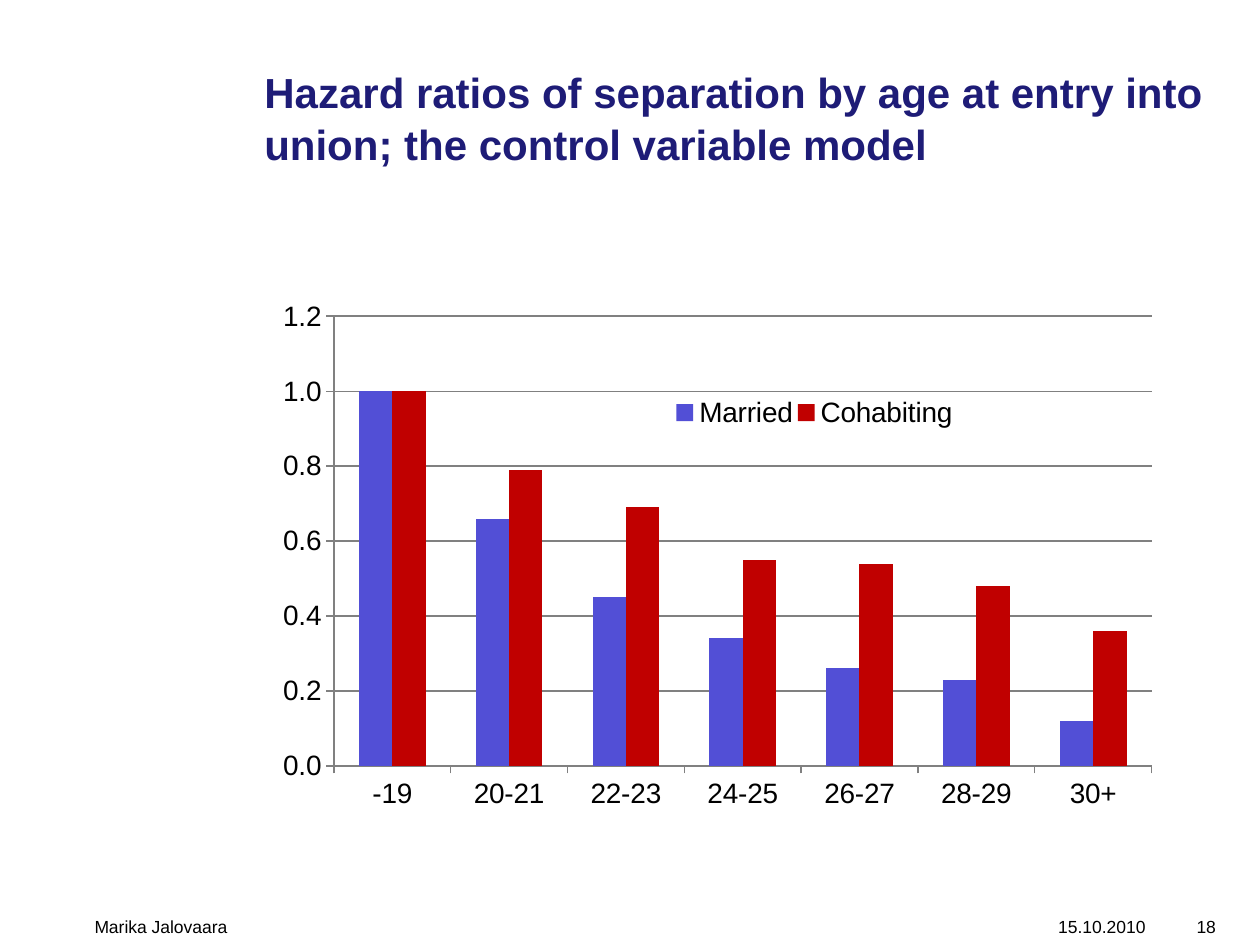
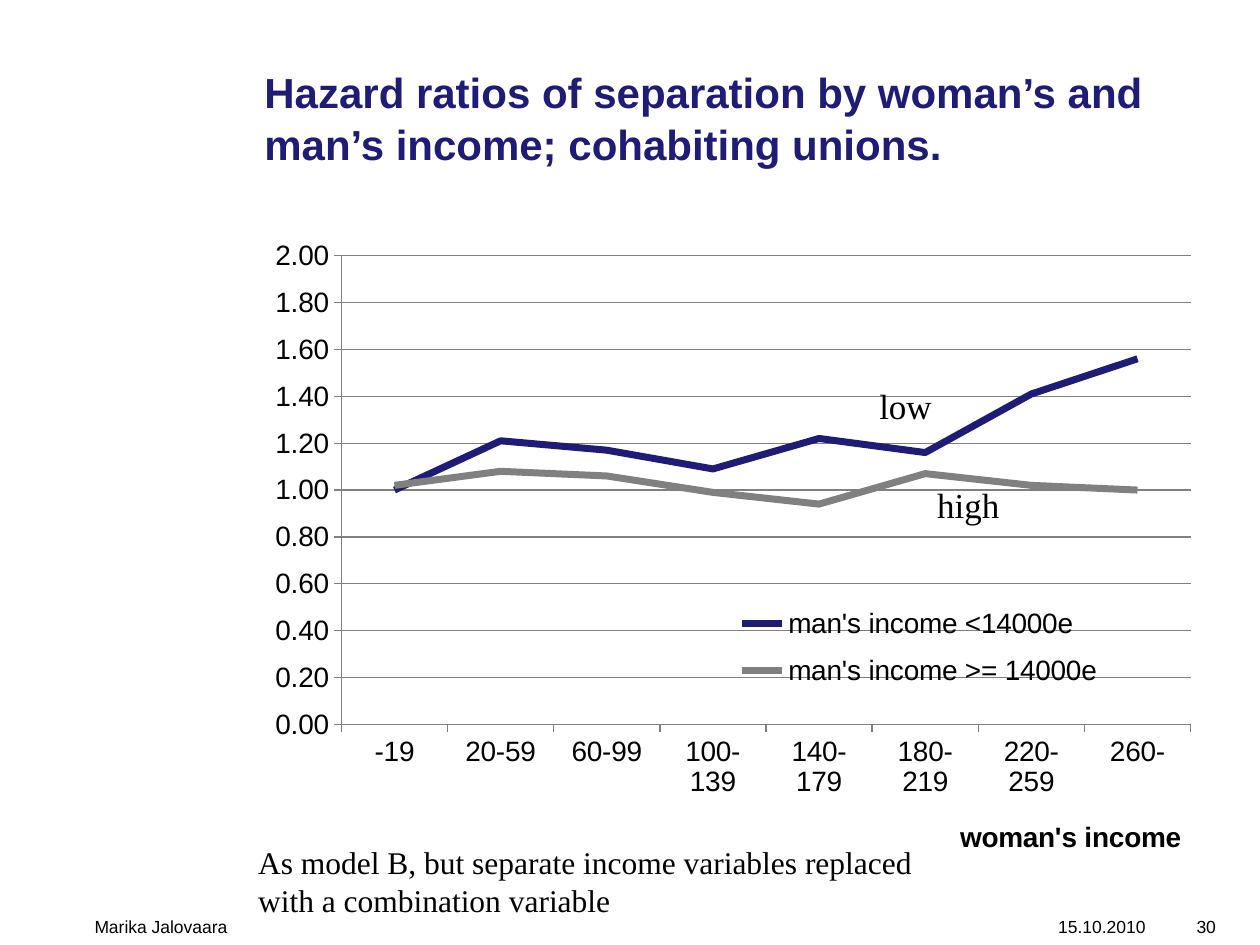
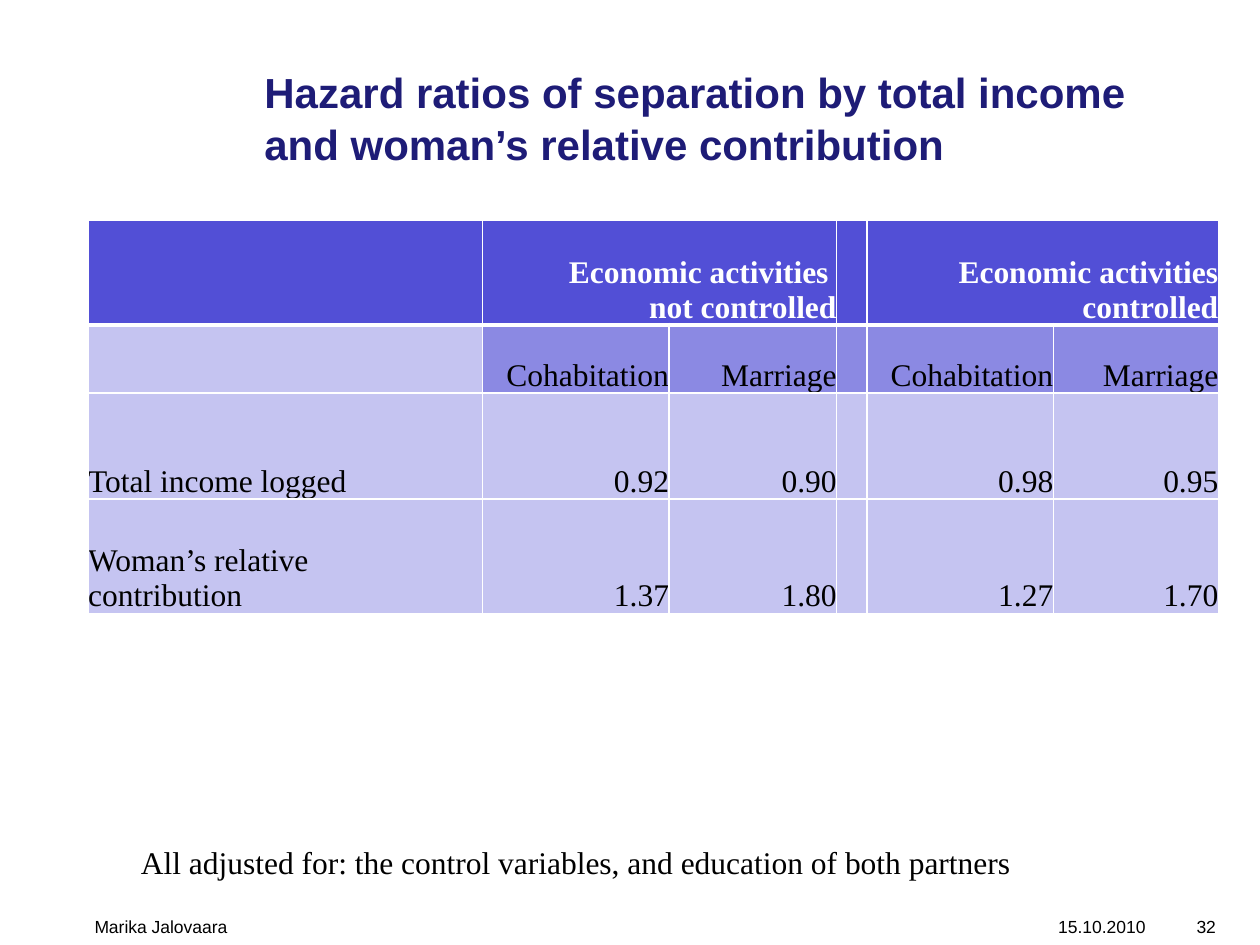
from lxml import etree
from pptx import Presentation
from pptx.chart.data import CategoryChartData
from pptx.dml.color import RGBColor
from pptx.enum.chart import (XL_CHART_TYPE, XL_LEGEND_POSITION,
                             XL_MARKER_STYLE, XL_TICK_MARK)
from pptx.enum.text import MSO_ANCHOR, PP_ALIGN
from pptx.oxml.ns import qn
from pptx.util import Inches, Pt

COLUMN, LINE = XL_CHART_TYPE.COLUMN_CLUSTERED, XL_CHART_TYPE.LINE
LEGEND_RIGHT = XL_LEGEND_POSITION.RIGHT
NO_MARKER = XL_MARKER_STYLE.NONE
TICK_CROSS = XL_TICK_MARK.OUTSIDE
TOP, BOTTOM = MSO_ANCHOR.TOP, MSO_ANCHOR.BOTTOM
LEFT, RIGHT = PP_ALIGN.LEFT, PP_ALIGN.RIGHT

SANS, SERIF = "Arial", "Times New Roman"
NAVY, VIOLET, RED, GREY = "1E1C77", "524FD6", "C00000", "808080"
MID, PALE, BLACK, WHITE = "8B89E3", "C5C4F1", "000000", "FFFFFF"

# Content; places inside a chart are in inches from its corner
AUTHOR, DATE = "Marika Jalovaara", "15.10.2010"

AGE = {
    "title": "Hazard ratios of separation by age at entry into union; "
             "the control variable model",
    "number": "18",
    "notes": [],
    "chart": {
        "type": COLUMN, "at": (1.97, 2.25, 7.5, 4.5),
        "cats": ["-19", "20-21", "22-23", "24-25", "26-27", "28-29", "30+"],
        "series": [
            ("Cohabiting", RED, [1, 0.79, 0.69, 0.55, 0.54, 0.48, 0.36]),
            ("Married", VIOLET, [1, 0.66, 0.45, 0.34, 0.26, 0.23, 0.12]),
        ],
        "last_first": True,
        "max": 1.2, "format": "0.0", "linked": False,
        "plot": (0.68, 0.26, 6.49, 3.57),
        "legend": (3.36, 0.87, 2.27, 0.31),
    },
    "labels": [],
}

INCOME = {
    "title": "Hazard ratios of separation by woman’s and man’s income; "
             "cohabiting unions.",
    "number": "30",
    "notes": [((1.95, 6.64, 5.51, 0.71),
               ["As model B, but separate income variables replaced",
                "with a combination variable"])],
    "chart": {
        "type": LINE, "at": (2, 1.75, 7.67, 5.42),
        "cats": ["-19", "20-59", "60-99", "100-139", "140-179", "180-219",
                 "220-259", "260-"],
        "series": [
            ("man's income <14000e", NAVY,
             [1, 1.21, 1.17, 1.09, 1.22, 1.16, 1.41, 1.56]),
            ("man's income >= 14000e", GREY,
             [1.02, 1.08, 1.06, 0.99, 0.94, 1.07, 1.02, 1]),
        ],
        "last_first": False,
        "max": 2, "format": "0.00", "linked": True,
        "plot": (0.71, 0.28, 6.74, 3.72),
        "legend": (3.81, 2.95, 2.98, 0.87),
        "axis_title": ("woman's income", (5.58, 4.71)),
    },
    "labels": [((6.88, 3, 0.62, 0.44), ["low"]),
               ((7.34, 3.79, 0.7, 0.44), ["high"])],
}

CONTRIBUTION = {
    "title": "Hazard ratios of separation by total income and woman’s "
             "relative contribution",
    "number": "32",
    "notes": [((1.02, 6.64, 7.26, 0.4),
               ["All adjusted for: the control variables, and education of "
                "both partners"])],
    "table": {
        "at": (0.7, 1.75),
        "cols": [3.13, 1.48, 1.33, 0.24, 1.48, 1.31],
        "rows": [0.83, 0.54, 0.84, 0.91],
        "merged": [(1, 2), (4, 5)],
        "cells": [
            ["", "Economic activities \nnot controlled", "", "",
             "Economic activities controlled", ""],
            ["", "Cohabitation", "Marriage", "", "Cohabitation", "Marriage"],
            ["Total income logged", "0.92", "0.90", "", "0.98", "0.95"],
            ["Woman’s relative\ncontribution", "1.37", "1.80", "", "1.27",
             "1.70"],
        ],
    },
    "labels": [],
}


def rgb(color):
    return RGBColor.from_string(color)


def set_font(font, name, size, color, bold=False):
    font.name, font.size, font.bold = name, Pt(size), bold
    font.color.rgb = rgb(color)


def write(tf, lines, name, size, color, bold=False, align=LEFT, spacing=None):
    for i, line in enumerate(lines):
        p = tf.add_paragraph() if i else tf.paragraphs[0]
        p.alignment = align
        if spacing:
            p.line_spacing = Pt(spacing)
        r = p.add_run()
        r.text = line
        set_font(r.font, name, size, color, bold)


def add_text(s, at, lines, name, size, color=BLACK, wrap=False, side=0.1,
             anchor=TOP, **style):
    tf = s.shapes.add_textbox(*map(Inches, at)).text_frame
    tf.word_wrap, tf.vertical_anchor = wrap, anchor
    tf.margin_left = tf.margin_right = Inches(side)
    write(tf, lines, name, size, color, **style)


# Shared title and footer
def add_frame(s, title, number):
    add_text(s, (2, 0.17, 7.67, 1.22), [title], SANS, 24, NAVY, wrap=True,
             anchor=BOTTOM, bold=True, spacing=30)
    for left, width, text, align in [(7.64, 1.45, DATE, RIGHT),
                                     (0.75, 6.85, AUTHOR, LEFT),
                                     (9.1, 0.55, number, RIGHT)]:
        add_text(s, (left, 7.22, width, 0.22), [text], SANS, 10, wrap=True,
                 side=0, align=align)


# Charts
def place(element, index, chart_at, box, inner=False):
    """Fix the place of a chart part, as fractions of the chart's size."""
    for old in element.findall(qn("c:layout")):
        element.remove(old)
    layout = etree.Element(qn("c:layout"))
    manual = etree.SubElement(layout, qn("c:manualLayout"))
    settings = [("layoutTarget", "inner")] if inner else []
    settings += [("xMode", "edge"), ("yMode", "edge")]
    width, height = chart_at[2:]
    for tag, length, whole in zip("xywh", box, (width, height) * 2):
        settings.append((tag, length / whole))
    for tag, value in settings:
        etree.SubElement(manual, qn("c:" + tag)).set("val", str(value))
    element.insert(index, layout)


def add_chart(s, spec):
    at = spec["at"]
    data = CategoryChartData()
    data.categories = spec["cats"]
    for name, _, values in spec["series"]:
        data.add_series(name, values)
    chart = s.shapes.add_chart(spec["type"], *map(Inches, at), data).chart
    chart.has_title = False
    set_font(chart.font, SANS, 16, BLACK)
    chart.has_legend = True
    chart.legend.position = LEGEND_RIGHT
    chart.legend.include_in_layout = spec["type"] == COLUMN
    place(chart.legend._element, 1, at, spec["legend"])
    place(chart._chartSpace.chart.plotArea, 0, at, spec["plot"], inner=True)

    # Series
    plot = chart.plots[0]
    plot.vary_by_categories = False
    if spec["type"] == COLUMN:
        plot.gap_width, plot.overlap = 150, 0
    for series, (_, color, _) in zip(plot.series, spec["series"]):
        if spec["type"] == COLUMN:
            series.format.fill.solid()
            series.format.fill.fore_color.rgb = rgb(color)
        else:
            series.smooth = False
            series.marker.style = NO_MARKER
            series.format.line.color.rgb = rgb(color)
            series.format.line.width = Pt(4)
    if spec["last_first"]:
        first, last = plot.series[0]._element, plot.series[-1]._element
        first.addprevious(last)

    # Axes
    values, cats = chart.value_axis, chart.category_axis
    values.minimum_scale, values.maximum_scale = 0, spec["max"]
    values.major_unit = 0.2
    values.tick_labels.number_format = spec["format"]
    values.tick_labels.number_format_is_linked = spec["linked"]
    values.has_major_gridlines = True
    for axis in (values, cats):
        axis.major_tick_mark = TICK_CROSS
    for part in (values, cats, values.major_gridlines):
        part.format.line.color.rgb = rgb(GREY)
        part.format.line.width = Pt(0.75)
    if "axis_title" in spec:
        text, corner = spec["axis_title"]
        write(cats.axis_title.text_frame, [text], SANS, 16, BLACK, bold=True)
        place(cats.axis_title._element, 1, at, corner)


# Table
def set_borders(cell, top, bottom):
    tcPr = cell._tc.get_or_add_tcPr()
    for side, width in zip("LRTB", (1, 1, top, bottom)):
        ln = etree.SubElement(tcPr, qn("a:ln" + side), w=str(Pt(width)))
        fill = etree.SubElement(ln, qn("a:solidFill"))
        etree.SubElement(fill, qn("a:srgbClr"), val=WHITE)


def add_table(s, spec):
    cols, rows = spec["cols"], spec["rows"]
    size = (*spec["at"], sum(cols), sum(rows))
    table = s.shapes.add_table(len(rows), len(cols),
                               *map(Inches, size)).table
    table.first_row = table.horz_banding = False
    for column, width in zip(table.columns, cols):
        column.width = Inches(width)
    for row, height in zip(table.rows, rows):
        row.height = Inches(height)
    for first, last in spec["merged"]:
        table.cell(0, first).merge(table.cell(0, last))

    for i, texts in enumerate(spec["cells"]):
        head = i == 0
        for j, text in enumerate(texts):
            cell = table.cell(i, j)
            cell.margin_left = cell.margin_right = 0
            cell.margin_top = cell.margin_bottom = 0
            cell.vertical_anchor = BOTTOM
            set_borders(cell, 3 if i == 1 else 1, 3 if head else 1)
            cell.fill.solid()
            fill = VIOLET if head else MID if i == 1 and j else PALE
            cell.fill.fore_color.rgb = rgb(fill)
            if text:
                write(cell.text_frame, text.split("\n"), SERIF, 18,
                      WHITE if head else BLACK, bold=head,
                      align=RIGHT if j else LEFT)


def main():
    prs = Presentation()
    prs.slide_width, prs.slide_height = Inches(10), Inches(7.5)
    for content in (AGE, INCOME, CONTRIBUTION):
        s = prs.slides.add_slide(prs.slide_layouts[6])
        add_frame(s, content["title"], content["number"])
        for at, lines in content["notes"]:
            add_text(s, at, lines, SERIF, 18)
        if "chart" in content:
            add_chart(s, content["chart"])
        if "table" in content:
            add_table(s, content["table"])
        for at, lines in content["labels"]:
            add_text(s, at, lines, SERIF, 20)
    prs.save("out.pptx")


if __name__ == "__main__":
    main()
